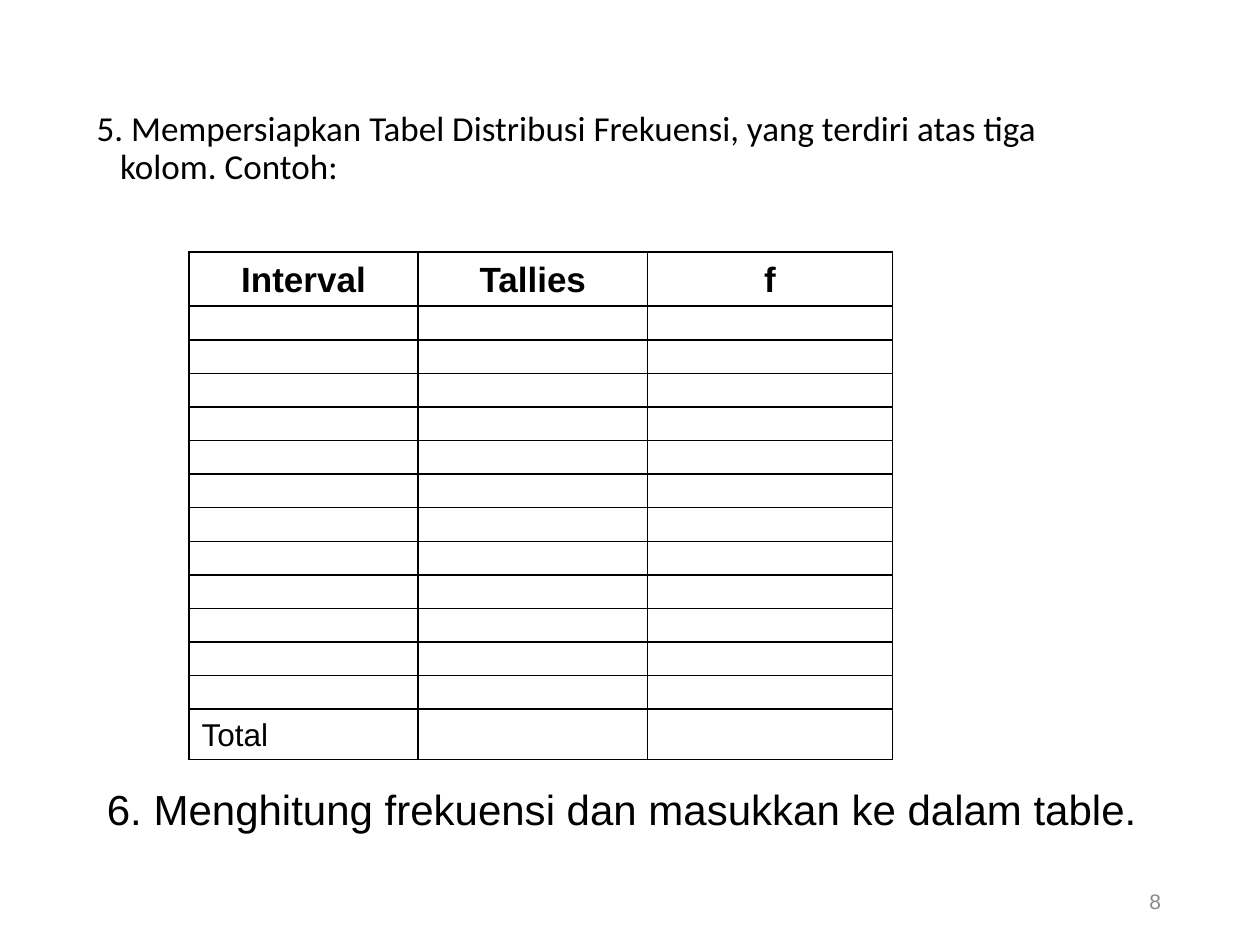
import pptx
import pptx.util
import pptx.dml.color
import pptx.enum.text
import pptx.oxml.ns
from lxml import etree

Pt = pptx.util.Pt
qn = pptx.oxml.ns.qn
ALIGN = pptx.enum.text.PP_ALIGN
ANCHOR = pptx.enum.text.MSO_ANCHOR
AUTO_SIZE = pptx.enum.text.MSO_AUTO_SIZE
COLORS = {"text": "000000", "border": "000000", "number": "898989"}


def format_paragraph(paragraph, size, font="Arial", color="text", bold=False, indent=0):
    """Set the font and a hanging indent in points."""
    paragraph.font.name = font
    paragraph.font.size = Pt(size)
    paragraph.font.bold = bold
    paragraph.font.color.rgb = pptx.dml.color.RGBColor.from_string(COLORS[color])
    properties = paragraph._p.get_or_add_pPr()
    properties.set("marL", str(Pt(indent)))
    properties.set("indent", str(-Pt(indent)))


def add_borders(cell, width=1):
    properties = cell._tc.get_or_add_tcPr()
    for position, side in enumerate(("lnL", "lnR", "lnT", "lnB")):
        line = etree.Element(qn(f"a:{side}"), w=str(Pt(width)))
        fill = etree.SubElement(line, qn("a:solidFill"))
        etree.SubElement(fill, qn("a:srgbClr"), val=COLORS["border"])
        properties.insert(position, line)


presentation = pptx.Presentation()
presentation.slide_width = Pt(720)
presentation.slide_height = Pt(540)
slide = presentation.slides.add_slide(presentation.slide_layouts[1])
title = slide.shapes.title
title._element.getparent().remove(title._element)

# Step 5
body = slide.placeholders[1]
body.left, body.top, body.width, body.height = Pt(48), Pt(60), Pt(606), Pt(60)
body.text_frame.auto_size = AUTO_SIZE.NONE
paragraph = body.text_frame.paragraphs[0]
paragraph.text = "5. Mempersiapkan Tabel Distribusi Frekuensi, yang terdiri atas tiga kolom. Contoh:"
paragraph.line_spacing = 0.9
paragraph.space_before = Pt(7.5)
format_paragraph(paragraph, 20, font="Calibri", indent=13.5)
etree.SubElement(paragraph._p.pPr, qn("a:buNone"))
paragraph._p.pPr.insert(2, paragraph._p.pPr[-1])

# Frequency table
column_widths = [131, 131, 140]
row_heights = [31] + [19.2] * 12 + [28.8]
texts = {(0, 0): "Interval", (0, 1): "Tallies", (0, 2): "f", (13, 0): "Total"}
table = slide.shapes.add_table(
    len(row_heights), len(column_widths), Pt(108), Pt(144),
    Pt(sum(column_widths)), Pt(sum(row_heights))).table
table.first_row = False
table.horz_banding = False
for column, width in zip(table.columns, column_widths):
    column.width = Pt(width)
for row_index, height in enumerate(row_heights):
    table.rows[row_index].height = Pt(height)
    for column_index in range(len(column_widths)):
        cell = table.cell(row_index, column_index)
        cell.fill.background()
        cell.vertical_anchor = ANCHOR.BOTTOM
        add_borders(cell)
        paragraph = cell.text_frame.paragraphs[0]
        text = texts.get((row_index, column_index))
        if text is None:
            etree.SubElement(paragraph._p, qn("a:endParaRPr"), sz="800")
            continue
        paragraph.text = text
        is_header = row_index == 0
        paragraph.alignment = ALIGN.CENTER if is_header else ALIGN.LEFT
        format_paragraph(paragraph, 20 if is_header else 18, bold=is_header, indent=27)

# Slide number
number_box = slide.shapes.add_textbox(Pt(508.5), Pt(500.5), Pt(162), Pt(28.8))
number_box.text_frame.word_wrap = True
number_box.text_frame.vertical_anchor = ANCHOR.MIDDLE
paragraph = number_box.text_frame.paragraphs[0]
paragraph.text = "8"
paragraph.alignment = ALIGN.RIGHT
format_paragraph(paragraph, 12, color="number")

# Step 6
step_box = slide.shapes.add_textbox(Pt(54), Pt(444), Pt(603), Pt(36))
step_box.text_frame.word_wrap = False
step_box.text_frame.auto_size = AUTO_SIZE.SHAPE_TO_FIT_TEXT
paragraph = step_box.text_frame.paragraphs[0]
paragraph.text = "6. Menghitung frekuensi dan masukkan ke dalam table."
paragraph.space_before = Pt(4.8)
format_paragraph(paragraph, 24)

presentation.save("out.pptx")
